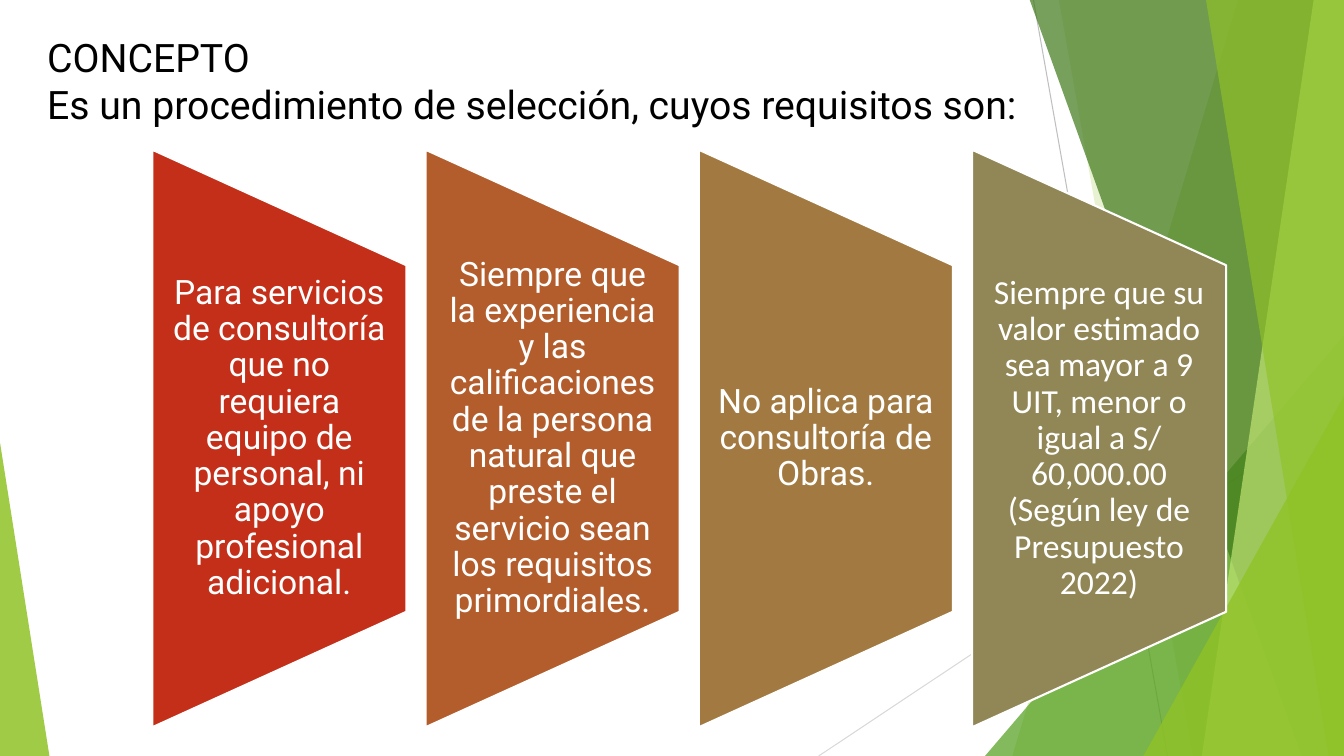
from pptx import Presentation
from pptx.dml.color import RGBColor
from pptx.enum.shapes import MSO_CONNECTOR, MSO_SHAPE
from pptx.enum.text import MSO_ANCHOR, PP_ALIGN
from pptx.oxml.ns import qn
from pptx.util import Inches, Pt
from lxml.etree import SubElement

WHITE = RGBColor(0xFF, 0xFF, 0xFF)
BLACK = RGBColor(0x00, 0x00, 0x00)
SILVER = RGBColor(0xBF, 0xBF, 0xBF)
PALE = RGBColor(0xD9, 0xD9, 0xD9)
LIME = RGBColor(0x90, 0xC2, 0x26)
GREEN = RGBColor(0x54, 0xA0, 0x21)
DARK = RGBColor(0x3F, 0x78, 0x19)
LIGHT = RGBColor(0xC0, 0xE4, 0x74)
RED = RGBColor(0xC4, 0x2F, 0x1A)
RUST = RGBColor(0xB3, 0x5D, 0x2D)
OCHRE = RGBColor(0xA2, 0x7A, 0x41)
OLIVE = RGBColor(0x91, 0x86, 0x55)

WIDE, HIGH = 13.33, 7.5
EDGE = -0.01

CARDS = [
    (RED, "Roboto", "Para servicios de consultoría que no requiera equipo de "
     "personal, ni apoyo profesional adicional."),
    (RUST, "Roboto", "Siempre que la experiencia y las calificaciones de la "
     "persona natural que preste el servicio sean los requisitos primordiales."),
    (OCHRE, "Roboto", "No aplica para consultoría de Obras."),
    (OLIVE, "Calibri", "Siempre que su valor estimado sea mayor a 9 UIT, menor "
     "o igual a S/ 60,000.00 (Según ley de Presupuesto 2022)"),
]


class Deck:
    def __init__(self, font="Roboto"):
        self.font = font
        self.show = Presentation()
        self.show.slide_width = Inches(WIDE)
        self.show.slide_height = Inches(HIGH)
        self.slide = self.show.slides.add_slide(self.show.slide_layouts[6])
        self.shapes = self.slide.shapes

    def paint(self, shape, color, alpha=100, edge=None):
        """Fill a shape, with alpha as percent of opacity."""
        shape.shadow.inherit = False
        shape.fill.solid()
        shape.fill.fore_color.rgb = color
        if alpha < 100:
            tint = shape.fill._xPr.find(qn("a:solidFill"))[0]
            SubElement(tint, qn("a:alpha"), val=str(alpha * 1000))
        if edge is None:
            shape.line.fill.background()
        else:
            shape.line.color.rgb = edge
            shape.line.width = Pt(1.5)

    def line(self, start, end, color):
        line = self.shapes.add_connector(
            MSO_CONNECTOR.STRAIGHT, *map(Inches, start + end))
        line.line.color.rgb = color
        line.line.width = Pt(0.75)
        SubElement(line._element.spPr, qn("a:effectLst"))

    def band(self, top, foot, color, alpha):
        """Fill from a slanted left side to the right slide edge."""
        points = [(top, EDGE), (WIDE, EDGE), (WIDE, HIGH), (foot, HIGH)]
        points = [(Inches(x), Inches(y)) for x, y in points]
        pen = self.shapes.build_freeform(*points[0])
        pen.add_line_segments(points[1:], close=True)
        self.paint(pen.convert_to_shape(), color, alpha)

    def shape(self, kind, box, color, alpha=100, edge=None, turn=0, tip=None):
        shape = self.shapes.add_shape(kind, *map(Inches, box))
        shape.rotation = turn
        if tip is not None:
            shape.adjustments[0] = tip
        self.paint(shape, color, alpha, edge)

    def text(self, text, box, size=24, color=BLACK, font=None, align=PP_ALIGN.LEFT,
             anchor=MSO_ANCHOR.TOP, space=1.0, pad=(0.1, 0.05)):
        frame = self.shapes.add_textbox(*map(Inches, box)).text_frame
        frame.word_wrap = True
        frame.vertical_anchor = anchor
        frame.margin_left = frame.margin_right = Inches(pad[0])
        frame.margin_top = frame.margin_bottom = Inches(pad[1])
        frame.text = text
        for para in frame.paragraphs:
            para.alignment = align
            para.line_spacing = space
            for run in para.runs:
                run.font.name = font or self.font
                run.font.size = Pt(size)
                run.font.color.rgb = color

    def card(self, left, color, font, text):
        """Draw a trapezoid on its side with its text."""
        wide, high, mid = 2.5, 5.7, 4.35
        wide, high = wide + 0.02, high + 0.03
        box = (left + (wide - high) / 2, mid - wide / 2, high, wide)
        self.shape(MSO_SHAPE.FLOWCHART_MANUAL_OPERATION, box, color,
                   edge=WHITE, turn=270)
        self.text(text, (left, 2.63, wide, 3.44), color=WHITE, font=font,
                  align=PP_ALIGN.CENTER, anchor=MSO_ANCHOR.MIDDLE,
                  space=0.9, pad=(0.17, 0))


def main():
    deck = Deck()
    peak = MSO_SHAPE.ISOSCELES_TRIANGLE
    deck.line((10.25, 0), (11.58, HIGH), SILVER)
    deck.line((WIDE, 4.03), (8.12, HIGH), PALE)
    deck.band(12.28, 10.04, LIME, 30)
    deck.band(10.5, 11.83, LIME, 20)
    deck.shape(peak, (9.77, 3.33, 3.56, 4.17), GREEN, 72, tip=1)
    deck.band(10.21, 12.91, DARK, 70)
    deck.band(13.03, 11.92, LIGHT, 70)
    deck.band(11.96, 13.18, LIME, 65)
    deck.shape(peak, (11.34, 3.93, 1.99, 3.57), LIME, 80, tip=1)
    deck.shape(peak, (0, 4.39, 0.49, 3.11), LIME, 85, tip=0)
    for i, card in enumerate(CARDS):
        deck.card(1.51 + 2.71 * i, *card)
    deck.text("CONCEPTO\nEs un procedimiento de selección, cuyos requisitos son:",
              (0.37, 0.28, 10.86, 1.04), size=28)
    deck.show.save("out.pptx")


if __name__ == "__main__":
    main()
